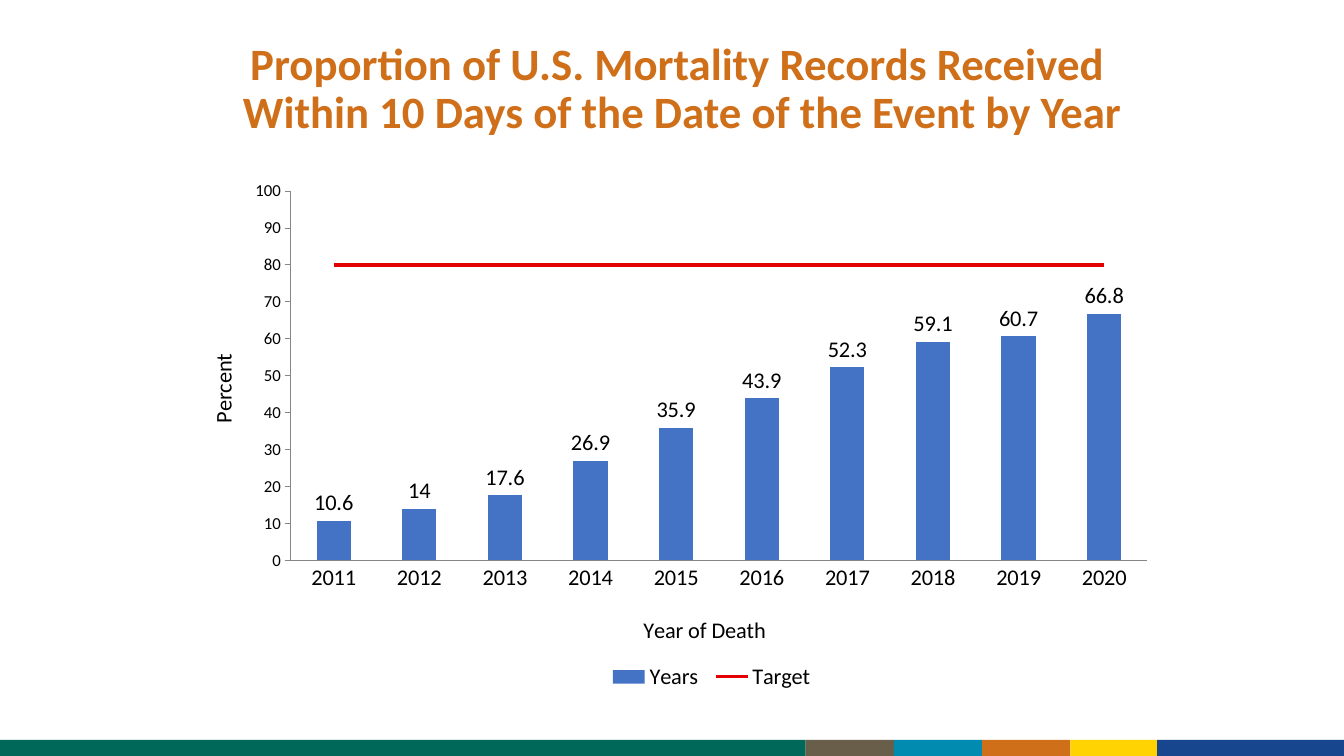
from itertools import pairwise

from lxml import etree
from pptx import Presentation, util as u
from pptx.chart.data import CategoryChartData
from pptx.dml.color import RGBColor
from pptx.enum import chart as c, shapes, text
from pptx.oxml import parse_xml
from pptx.oxml.ns import nsdecls, qn

COLOURS = {
    "green": "006859", "brown": "695E4A", "teal": "018BB0", "orange": "CF6F19",
    "yellow": "FFD302", "navy": "17468F", "bar": "4472C4", "target": "E20000",
    "axis": "868686", "black": "000000",
}
YEARS = [str(year) for year in range(2011, 2021)]
RECEIVED = [10.6, 14, 17.6, 26.9, 35.9, 43.9, 52.3, 59.1, 60.7, 66.8]
GOAL = 80
SCALE = {"minimum_scale": 0, "maximum_scale": 100}

# Line group with its own hidden pair of axes
LINE_PLOT = f"""<c:lineChart {nsdecls('c')}><c:grouping val="standard"/>
<c:varyColors val="0"/><c:marker val="1"/><c:axId val="501"/><c:axId val="502"/></c:lineChart>"""
HIDDEN_AXIS = """<c:{kind} {ns}><c:axId val="{own}"/><c:scaling><c:orientation val="minMax"/>
{limits}</c:scaling><c:delete val="1"/><c:axPos val="{side}"/><c:crossAx val="{other}"/>
<c:crosses val="{crosses}"/></c:{kind}>"""


def colour(name):
    return RGBColor.from_string(COLOURS[name])


def apply(target, values):
    for name, value in values.items():
        setattr(target, name, value)


class SlideBuilder:
    def __init__(self, deck, font):
        self.page = deck.slides.add_slide(deck.slide_layouts[5])
        self.font = font

    def style_font(self, font, size, shade="black", bold=False):
        apply(font, {"name": self.font, "size": u.Pt(size), "bold": bold})
        font.color.rgb = colour(shade)

    def title(self, wording, left, top, width, height):
        box = self.page.shapes.title
        apply(box, {"left": u.Pt(left), "top": u.Pt(top),
                    "width": u.Pt(width), "height": u.Pt(height)})
        frame = box.text_frame
        apply(frame, {"text": wording, "vertical_anchor": text.MSO_ANCHOR.MIDDLE,
                      "word_wrap": True, "auto_size": text.MSO_AUTO_SIZE.NONE})
        para = frame.paragraphs[0]
        apply(para, {"alignment": text.PP_ALIGN.CENTER, "line_spacing": 0.9})
        for span in para.runs:
            self.style_font(span.font, 32, "orange", True)

    def stripe(self, shade, left, right):
        box = self.page.shapes.add_shape(
            shapes.MSO_SHAPE.RECTANGLE, u.Pt(left), u.Pt(528.5), u.Pt(right - left), u.Pt(11.5))
        box.shadow.inherit = False
        box.fill.solid()
        box.fill.fore_color.rgb = colour(shade)
        box.line.fill.background()

    def place(self, element, index, **fractions):
        """Set a manual layout, in fractions of the chart's size."""
        for old in element.findall(qn("c:layout")):
            element.remove(old)
        layout = etree.Element(qn("c:layout"))
        manual = etree.SubElement(layout, qn("c:manualLayout"))
        if element.tag == qn("c:plotArea"):
            etree.SubElement(manual, qn("c:layoutTarget"), val="inner")
        for side in "xy":
            etree.SubElement(manual, qn(f"c:{side}Mode"), val="edge")
        for name, value in fractions.items():
            etree.SubElement(manual, qn(f"c:{name}"), val=str(value))
        element.insert(index, layout)

    def axis(self, axis, caption, size, tick, x, y):
        apply(axis, {"has_major_gridlines": False, "major_tick_mark": tick,
                     "minor_tick_mark": c.XL_TICK_MARK.NONE})
        self.style_font(axis.tick_labels.font, size)
        axis.format.line.color.rgb = colour("axis")
        axis.format.line.width = u.Pt(0.75)
        frame = axis.axis_title.text_frame
        frame.text = caption
        self.style_font(frame.paragraphs[0].runs[0].font, 16)
        self.place(axis.axis_title._element, 1, x=x, y=y)

    def move_to_line(self, chart):
        """Turn the last bar series into a line on hidden axes."""
        bars = chart.plots[0]._element
        series = bars.findall(qn("c:ser"))[-1]
        for bar_only in series.findall(qn("c:invertIfNegative")):
            series.remove(bar_only)
        line = parse_xml(LINE_PLOT)
        line.find(qn("c:varyColors")).addnext(series)
        bars.addnext(line)
        limits = '<c:max val="100"/><c:min val="0"/>'
        last = chart.value_axis._element
        for kind, own, other, side, crosses, bounds in (
                ("valAx", 502, 501, "r", "max", limits),
                ("catAx", 501, 502, "b", "autoZero", "")):
            last.addnext(parse_xml(HIDDEN_AXIS.format(
                kind=kind, ns=nsdecls("c"), own=own, other=other,
                side=side, crosses=crosses, limits=bounds)))

    def chart(self, left, top, width, height):
        data = CategoryChartData()
        data.categories = YEARS
        data.add_series("Years", RECEIVED)
        data.add_series("Target", [GOAL] * len(YEARS))
        chart = self.page.shapes.add_chart(
            c.XL_CHART_TYPE.COLUMN_CLUSTERED, u.Pt(left), u.Pt(top),
            u.Pt(width), u.Pt(height), data).chart
        chart.has_title = False
        self.style_font(chart.font, 16)

        # Axes
        ticks = c.XL_TICK_MARK
        self.axis(chart.category_axis, "Year of Death", 16, ticks.NONE, 0.467, 0.825)
        self.axis(chart.value_axis, "Percent", 12, ticks.OUTSIDE, 0.027, 0.335)
        apply(chart.value_axis, SCALE | {"major_unit": 10})

        # Bars and target line
        self.move_to_line(chart)
        bars, line = chart.plots
        apply(bars, {"gap_width": 150, "overlap": -100, "vary_by_categories": False})
        years, target = bars.series[0], line.series[0]
        years.format.fill.solid()
        years.format.fill.fore_color.rgb = colour("bar")
        labels = years.data_labels
        apply(labels, {"show_value": True, "position": c.XL_LABEL_POSITION.OUTSIDE_END})
        self.style_font(labels.font, 16)
        target.smooth = False
        target.marker.style = c.XL_MARKER_STYLE.NONE
        target.format.line.color.rgb = colour("target")
        target.format.line.width = u.Pt(2.25)

        # Legend and plot position
        chart.has_legend = True
        apply(chart.legend, {"position": c.XL_LEGEND_POSITION.BOTTOM,
                             "include_in_layout": False})
        self.style_font(chart.legend.font, 16)
        self.place(chart.legend._element, 1, x=0.43, y=0.92, w=0.22, h=0.06)
        self.place(bars._element.getparent(), 0, x=0.115, y=0.037, w=0.865, h=0.694)


def main():
    deck = Presentation()
    apply(deck, {"slide_width": u.Pt(960), "slide_height": u.Pt(540)})
    slide = SlideBuilder(deck, "Calibri")

    # Footer stripes
    edges = pairwise([0, 575.5, 638.5, 701.5, 764.5, 826.5, 960])
    for shade, (left, right) in zip(
            ("green", "brown", "teal", "orange", "yellow", "navy"), edges):
        slide.stripe(shade, left, right)

    # Title and chart
    slide.title("Proportion of U.S. Mortality Records Received \v"
                "Within 10 Days of the Date of the Event by Year", 73.5, 12, 828, 104.5)
    slide.chart(126.5, 122.5, 707, 380)
    deck.save("out.pptx")


if __name__ == "__main__":
    main()
